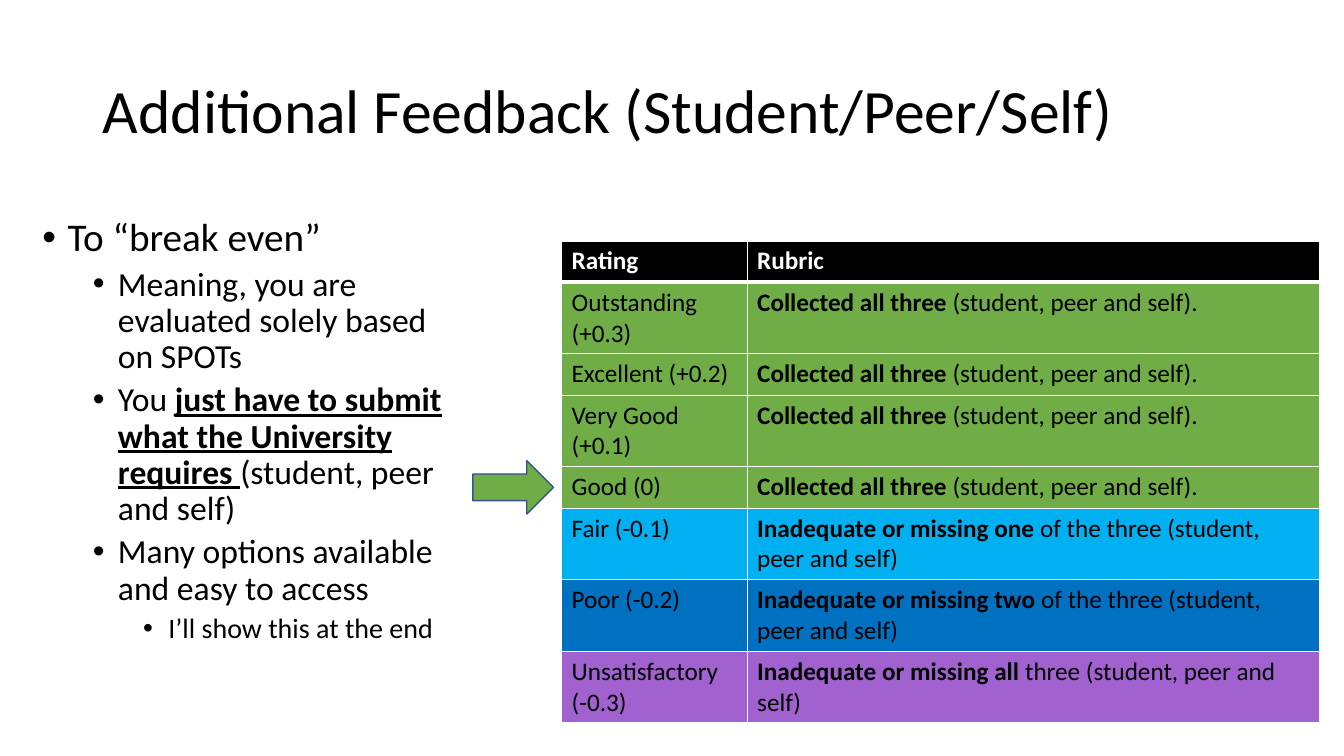
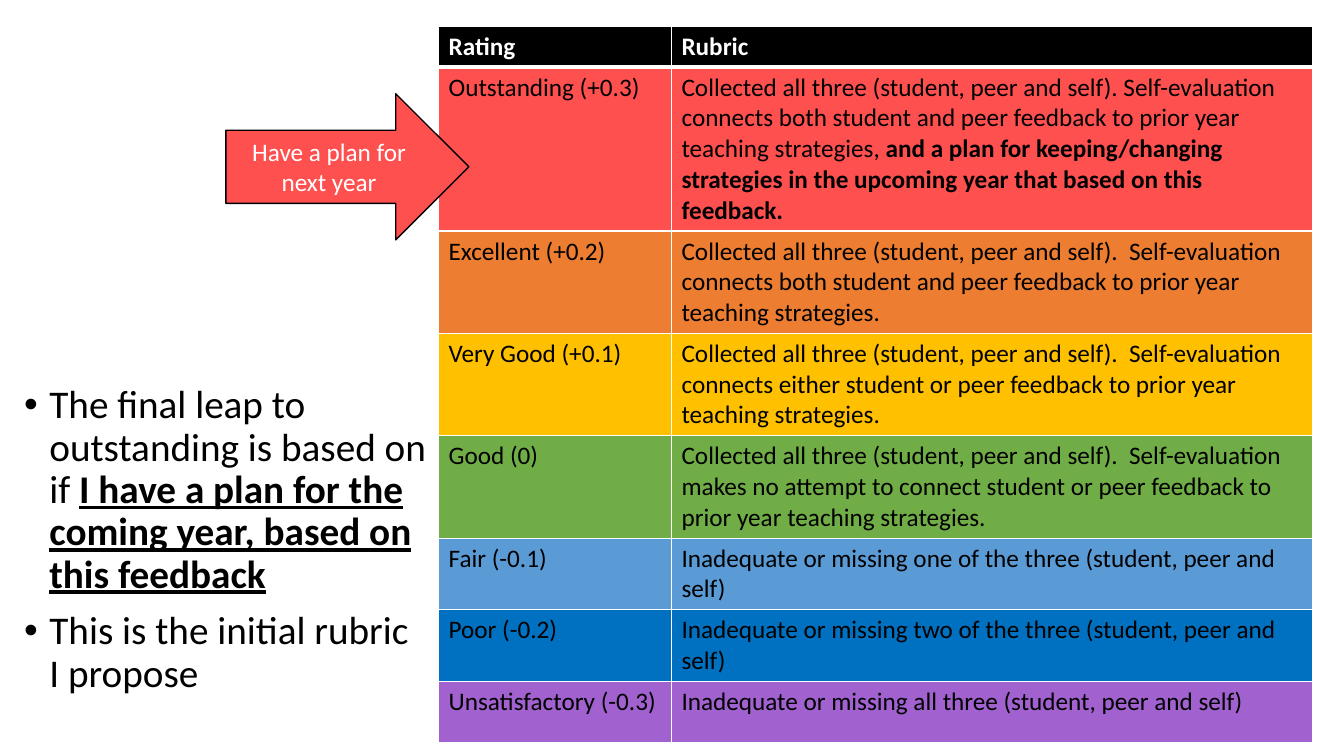
from lxml import etree
from pptx import Presentation
from pptx.dml.color import RGBColor
from pptx.enum.shapes import MSO_SHAPE
from pptx.enum.text import MSO_ANCHOR, MSO_AUTO_SIZE, PP_ALIGN
from pptx.oxml.ns import qn
from pptx.util import Inches, Pt

RIGHT_ARROW = MSO_SHAPE.RIGHT_ARROW
MIDDLE, TOP = MSO_ANCHOR.MIDDLE, MSO_ANCHOR.TOP
LEFT, CENTER = PP_ALIGN.LEFT, PP_ALIGN.CENTER
NO_FIT = MSO_AUTO_SIZE.NONE

FONT = "Calibri"
COLORS = {
    "black": "000000", "white": "FFFFFF", "red": "FF5050", "orange": "ED7D31",
    "gold": "FFC000", "green": "70AD47", "sky": "00B0F0", "steel": "5B9BD5",
    "blue": "0070C0", "purple": "A162D0", "navy": "325491",
}
RATINGS = ["Outstanding (+0.3)", "Excellent (+0.2)", "Very Good (+0.1)", "Good (0)",
           "Fair (-0.1)", "Poor (-0.2)", "Unsatisfactory (-0.3)"]
BULLET_SIZES = [28, 24, 20]

COLLECTED = "Collected all three (student, peer and self)."
ALL_THREE = "*Collected all three *(student, peer and self)."
PRIOR = "feedback to prior year teaching strategies"

# Text between asterisks is emphasised
pages = [
    {
        "title": "Additional Feedback (Student/Peer/Self)",
        "bullets_at": (0.32, 2.11, 4.19, 4.76),
        "bullets": [
            (0, "To “break even”"),
            (1, "Meaning, you are evaluated solely based on SPOTs"),
            (1, "You *just have to submit what the University requires *(student, peer and self)"),
            (1, "Many options available and easy to access"),
            (2, "I’ll show this at the end"),
        ],
        "table_at": (5.57, 2.39),
        "columns": [1.84, 5.68],
        "rows": [0.41] * 8,
        "fills": ["green"] * 4 + ["sky", "blue", "purple"],
        "rubric": [ALL_THREE] * 4 + [
            "*Inadequate or missing one *of the three (student, peer and self)",
            "*Inadequate or missing two *of the three (student, peer and self)",
            "*Inadequate or missing all *three (student, peer and self)",
        ],
        "arrow_at": (4.69, 4.57, 0.8, 0.53),
        "arrow": ("green", "navy", ""),
    },
    {
        "title": None,
        "bullets_at": (0.14, 3.77, 4.19, 3.73),
        "bullets": [
            (0, "The final leap to outstanding is based on if "
                "*I have a plan for the coming year, based on this feedback*"),
            (0, "This is the initial rubric I propose"),
        ],
        "table_at": (4.35, 0.26),
        "columns": [2.31, 6.36],
        "rows": [0.39, 1.56, 0.98, 0.98, 0.98, 0.41, 0.39, 0.61],
        "fills": ["red", "orange", "gold", "green", "steel", "blue", "purple"],
        "rubric": [
            f"{COLLECTED} Self-evaluation connects both student and peer {PRIOR}, "
            "*and a plan for keeping/changing strategies in the upcoming year "
            "that based on this feedback.*",
            f"{COLLECTED}  Self-evaluation connects both student and peer {PRIOR}.",
            f"{COLLECTED}  Self-evaluation connects either student or peer {PRIOR}.",
            f"{COLLECTED}  Self-evaluation makes no attempt to connect student or peer {PRIOR}.",
            "Inadequate or missing one of the three (student, peer and self)",
            "Inadequate or missing two of the three (student, peer and self)",
            "Inadequate or missing all three (student, peer and self)",
        ],
        "arrow_at": (2.24, 0.93, 2.41, 1.45),
        "arrow": ("red", "black", "Have a plan for next year"),
    },
]


def write(paragraph, text, size=18, color="black", bold=False, underline=False, align=LEFT):
    """Fill a paragraph; parts between asterisks turn bold, and underlined if asked."""
    paragraph.alignment = align
    for index, part in enumerate(text.split("*")):
        if part:
            emphasised = index % 2 == 1
            run = paragraph.add_run()
            run.text = part
            run.font.name = FONT
            run.font.size = Pt(size)
            run.font.bold = bold or emphasised
            run.font.underline = underline and emphasised
            run.font.color.rgb = RGBColor.from_string(COLORS[color])


def place(shape, box):
    """Move a placeholder to left, top, width, height in inches."""
    shape.left, shape.top, shape.width, shape.height = map(Inches, box)
    shape.text_frame.word_wrap = True
    shape.text_frame.auto_size = NO_FIT


prs = Presentation()
prs.slide_width, prs.slide_height = Inches(13.33), Inches(7.5)

for page in pages:
    slide = prs.slides.add_slide(prs.slide_layouts[1])

    # Title
    title, body = slide.placeholders[0], slide.placeholders[1]
    if page["title"]:
        place(title, (0.92, 0.4, 11.5, 1.45))
        title.text_frame.vertical_anchor = MIDDLE
        heading = title.text_frame.paragraphs[0]
        heading.line_spacing = 0.9
        write(heading, page["title"], size=44)
    else:
        title.element.getparent().remove(title.element)

    # Bullets
    place(body, page["bullets_at"])
    body.text_frame.vertical_anchor = TOP
    for index, (level, text) in enumerate(page["bullets"]):
        point = body.text_frame.add_paragraph() if index else body.text_frame.paragraphs[0]
        point.level = level
        point.line_spacing = 0.9
        point.space_before = Pt(5 if level else 10)
        write(point, text, size=BULLET_SIZES[level], underline=True)
        props = point._p.get_or_add_pPr()
        props.set("marL", str(Inches(0.25 + 0.5 * level)))
        props.set("indent", str(Inches(-0.25)))
        etree.SubElement(props, qn("a:buFont"), typeface="Arial")
        etree.SubElement(props, qn("a:buChar"), char="•")

    # Rubric table
    widths, heights = page["columns"], page["rows"]
    table_box = (*page["table_at"], sum(widths), sum(heights))
    table = slide.shapes.add_table(len(heights), len(widths), *map(Inches, table_box)).table
    for column, width in zip(table.columns, widths):
        column.width = Inches(width)
    for row, height in zip(table.rows, heights):
        row.height = Inches(height)
    entries = [("Rating", "Rubric"), *zip(RATINGS, page["rubric"])]
    for r, (entry, fill) in enumerate(zip(entries, ["black"] + page["fills"])):
        for c, text in enumerate(entry):
            cell = table.cell(r, c)
            write(cell.text_frame.paragraphs[0], text,
                  color="black" if r else "white", bold=r == 0)
            # Borders go before the fill, with a thick rule under the header
            cell_props = cell._tc.get_or_add_tcPr()
            for side in "LRTB":
                thick = (r, side) in [(0, "B"), (1, "T")]
                border = etree.SubElement(cell_props, qn(f"a:ln{side}"), w=str(Pt(3 if thick else 1)))
                solid = etree.SubElement(border, qn("a:solidFill"))
                etree.SubElement(solid, qn("a:srgbClr"), val=COLORS["white"])
            cell.fill.solid()
            cell.fill.fore_color.rgb = RGBColor.from_string(COLORS[fill])

    # Arrow to the rating discussed
    fill, outline, label = page["arrow"]
    arrow = slide.shapes.add_shape(RIGHT_ARROW, *map(Inches, page["arrow_at"]))
    arrow.shadow.inherit = False
    arrow.fill.solid()
    arrow.fill.fore_color.rgb = RGBColor.from_string(COLORS[fill])
    arrow.line.color.rgb = RGBColor.from_string(COLORS[outline])
    arrow.line.width = Pt(1)
    if label:
        arrow.text_frame.word_wrap = True
        arrow.text_frame.vertical_anchor = MIDDLE
        write(arrow.text_frame.paragraphs[0], label, color="white", align=CENTER)

prs.save("out.pptx")
